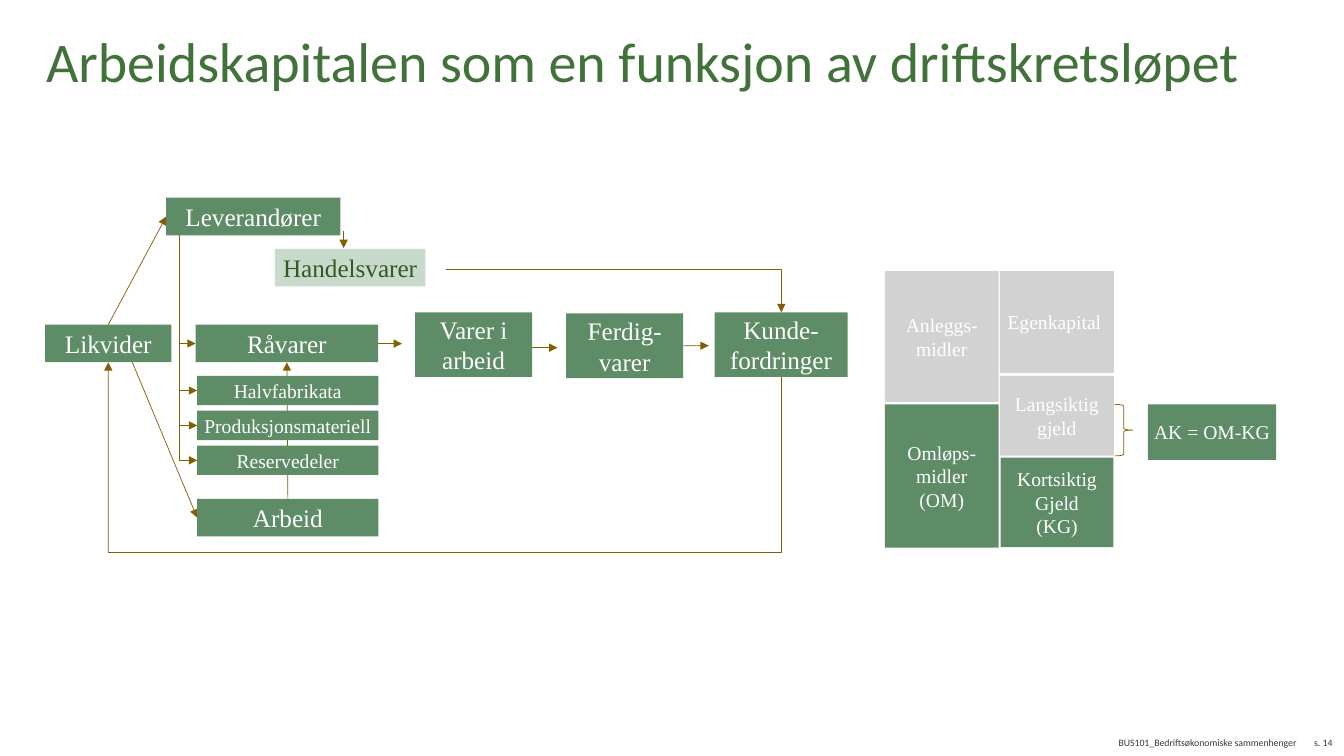
from dataclasses import dataclass
from typing import Union

from lxml.etree import SubElement
from pptx import Presentation
from pptx.dml.color import RGBColor
from pptx.enum.shapes import MSO_CONNECTOR, MSO_SHAPE
from pptx.enum.text import MSO_ANCHOR, MSO_AUTO_SIZE, PP_ALIGN
from pptx.oxml.ns import qn
from pptx.util import Cm, Pt


@dataclass(frozen=True)
class Theme:
    green: str = "5E8C66"
    pale: str = "C8DACB"
    gray: str = "A6A6A6"
    white: str = "FFFFFF"
    dark: str = "385723"
    head: str = "41723A"
    line: str = "806000"
    foot: str = "3B3838"
    serif: str = "Times New Roman"
    sans: str = "Calibri"
    title: float = 40
    large: float = 18
    small: float = 14
    tiny: float = 7
    stroke: float = 0.5


THEME = Theme()


@dataclass(frozen=True)
class Box:
    text: str
    x: float
    y: float
    w: float
    h: float
    size: float = THEME.small
    fill: str = THEME.green
    ink: str = THEME.white
    alpha: int = 100


@dataclass(frozen=True)
class Point:
    x: float
    y: float


@dataclass(frozen=True)
class Join:
    box: str
    side: int


End = Union[Point, Join]


@dataclass(frozen=True)
class Line:
    start: End
    end: End
    arrow: bool = True
    bent: bool = False


TOP, LEFT, BOTTOM, RIGHT = range(4)
BIG = THEME.large
TRUNK = 4.52
MID = 2.73
BASE = 13.92
CLAIM = 19.69

PARTS = [
    Box(text, 4.97, 9.47 + 0.88 * row, 4.57, 0.74)
    for row, text in enumerate(["Halvfabrikata", "Produksjonsmateriell", "Reservedeler"])
]
STOCK = Box("Råvarer", 4.93, 8.18, 4.6, 0.95, BIG)
FLOW = [
    Box("Leverandører", 4.19, 4.98, 4.39, 0.95, BIG),
    Box("Handelsvarer", 6.93, 6.27, 3.79, 0.95, BIG, THEME.pale, THEME.dark),
    Box("Likvider", 1.14, 8.18, 3.18, 0.95, BIG),
    STOCK,
    *PARTS,
    Box("Arbeid", 4.97, 12.57, 4.57, 0.95, BIG),
    Box("Varer i arbeid", 10.46, 7.87, 2.95, 1.63, BIG),
    Box("Ferdig-varer", 14.27, 7.9, 2.95, 1.63, BIG),
    Box("Kunde-fordringer", 18.01, 7.87, 3.35, 1.63, BIG),
]
BALANCE = [
    Box("Anleggs-midler", 22.3, 6.83, 2.87, 3.3, fill=THEME.gray, alpha=50),
    Box("Egenkapital ", 25.2, 6.83, 2.87, 2.57, fill=THEME.gray, alpha=50),
    Box("Langsiktig gjeld", 25.2, 9.47, 2.87, 2.01, fill=THEME.gray, alpha=50),
    Box("Omløps-midler\n(OM)", 22.3, 10.19, 2.87, 3.61),
    Box("Kortsiktig\nGjeld\n(KG)", 25.22, 11.53, 2.84, 2.26),
    Box("AK = OM-KG", 28.93, 10.19, 3.23, 1.4),
]
LINES = [
    Line(Join("Likvider", TOP), Join("Leverandører", LEFT)),
    Line(Point(3.33, 9.12), Join("Arbeid", LEFT)),
    Line(Join("Arbeid", TOP), Join("Råvarer", BOTTOM)),
    Line(Point(TRUNK, 5.89), Point(TRUNK, 11.61), arrow=False),
    Line(Point(8.66, 5.82), Point(8.66, 6.25)),
    Line(Join("Råvarer", RIGHT), Point(10.13, 8.66)),
    Line(Point(13.41, 8.76), Point(14.05, 8.76)),
    Line(Join("Ferdig-varer", RIGHT), Point(17.86, 8.71)),
    Line(Point(MID, BASE), Join("Likvider", BOTTOM)),
    Line(Point(11.23, 6.78), Point(CLAIM, 7.87), bent=True),
    Line(Point(MID, BASE), Point(CLAIM, 9.5), arrow=False, bent=True),
    *(Line(Point(TRUNK, box.y + box.h / 2), Join(box.text, LEFT)) for box in [STOCK, *PARTS]),
]


def write(shape, text: str, *, size: float, color: str, font: str = THEME.serif,
          align=PP_ALIGN.CENTER, pad=(0.1, 0.1), space=None) -> None:
    frame = shape.text_frame
    frame.word_wrap = True
    frame.auto_size = MSO_AUTO_SIZE.NONE
    frame.vertical_anchor = MSO_ANCHOR.MIDDLE
    frame.margin_left = frame.margin_right = Cm(pad[0])
    frame.margin_top = frame.margin_bottom = Cm(pad[1])
    frame.text = text
    for para in frame.paragraphs:
        para.alignment = align
        para.line_spacing = space
        for run in para.runs:
            run.font.name = font
            run.font.size = Pt(size)
            run.font.color.rgb = RGBColor.from_string(color)


def stroke(shape) -> None:
    shape.line.color.rgb = RGBColor.from_string(THEME.line)
    shape.line.width = Pt(THEME.stroke)


def draw(slide, box: Box):
    shape = slide.shapes.add_shape(
        MSO_SHAPE.RECTANGLE, Cm(box.x), Cm(box.y), Cm(box.w), Cm(box.h))
    shape.shadow.inherit = False
    shape.fill.solid()
    shape.fill.fore_color.rgb = RGBColor.from_string(box.fill)
    if box.alpha < 100:
        color = shape._element.spPr.find(".//" + qn("a:srgbClr"))
        SubElement(color, qn("a:alpha"), val=str(box.alpha * 1000))
    shape.line.fill.background()
    write(shape, box.text, size=box.size, color=box.ink)
    return shape


def link(slide, line: Line, boxes: dict) -> None:
    kind = MSO_CONNECTOR.ELBOW if line.bent else MSO_CONNECTOR.STRAIGHT
    spots = [Cm(value) for end in (line.start, line.end)
             for value in ((end.x, end.y) if isinstance(end, Point) else (0, 0))]
    wire = slide.shapes.add_connector(kind, *spots)
    if isinstance(line.start, Join):
        wire.begin_connect(boxes[line.start.box], line.start.side)
    if isinstance(line.end, Join):
        wire.end_connect(boxes[line.end.box], line.end.side)
    stroke(wire)
    node = wire._element
    if line.bent:
        node.spPr.find(qn("a:prstGeom")).set("prst", "bentConnector2")
    if line.arrow:
        SubElement(wire.line._get_or_add_ln(), qn("a:tailEnd"), type="triangle")
    SubElement(node.spPr, qn("a:effectLst"))
    node.getparent().insert(2, node)


def label(slide, text: str, x: float, w: float, align) -> None:
    note = slide.shapes.add_textbox(Cm(x), Cm(18.39), Cm(w), Cm(0.65))
    write(note, text, size=THEME.tiny, color=THEME.foot, font=THEME.sans,
          align=align, pad=(0, 0))


def main() -> None:
    deck = Presentation()
    deck.slide_width, deck.slide_height = Cm(33.87), Cm(19.05)
    slide = deck.slides.add_slide(deck.slide_layouts[5])
    title = slide.shapes.title
    title.left, title.top, title.width, title.height = Cm(0.91), Cm(0.71), Cm(31.22), Cm(1.8)
    write(title, "Arbeidskapitalen som en funksjon av driftskretsløpet",
          size=THEME.title, color=THEME.head, font=THEME.sans,
          align=PP_ALIGN.LEFT, pad=(0.25, 0.13), space=0.9)
    boxes = {box.text: draw(slide, box) for box in FLOW + BALANCE}
    for line in LINES:
        link(slide, line, boxes)
    brace = slide.shapes.add_shape(
        MSO_SHAPE.RIGHT_BRACE, Cm(28.09), Cm(10.19), Cm(0.46), Cm(1.3))
    brace.shadow.inherit = False
    brace.fill.background()
    stroke(brace)
    label(slide, "BUS101_Bedriftsøkonomiske sammenhenger", 28.19, 5.44, PP_ALIGN.LEFT)
    label(slide, "s. 14", 32.66, 0.92, PP_ALIGN.RIGHT)
    deck.save("out.pptx")


if __name__ == "__main__":
    main()
